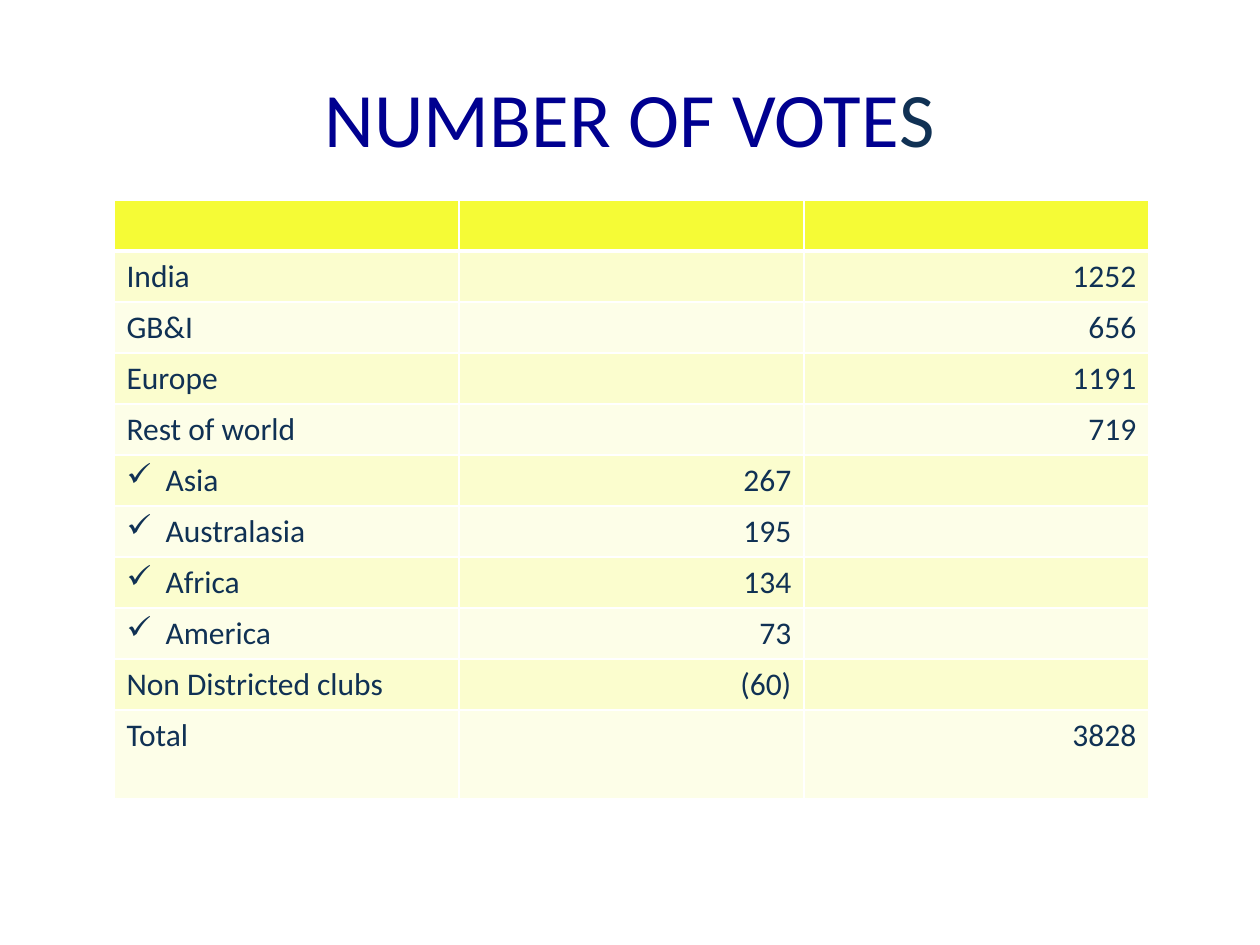
from lxml.etree import SubElement
from pptx import Presentation
from pptx.dml.color import RGBColor
from pptx.enum.text import MSO_ANCHOR as Anchor, PP_ALIGN as Align
from pptx.oxml import parse_xml
from pptx.oxml.ns import nsdecls, qn
from pptx.util import Pt

PX = 914400 // 126
FONT = "Calibri"
COLORS = {
    "title": "000090",
    "text": "103154",
    "header": "F5FB36",
    "odd": "FBFDCE",
    "even": "FDFEE8",
    "border": "FFFFFF",
}
TITLE = [("NUMBER OF VOTE", "title"), ("S", "text")]
ROWS = [
    ("", "", ""),
    ("India", "", "1252"),
    ("GB&I", "", "656"),
    ("Europe", "", "1191"),
    ("Rest of world", "", "719"),
    ("Asia", "267", ""),
    ("Australasia", "195", ""),
    ("Africa", "134", ""),
    ("America", "73", ""),
    ("Non Districted clubs", "(60)", ""),
    ("Total", "", "3828"),
]
CHECKED = {"Asia", "Australasia", "Africa", "America"}
TABLE_LEFT, TABLE_TOP = 114, 200
COLUMN_WIDTH, ROW_HEIGHT, TOTAL_HEIGHT = 345, 51, 89
BULLET_INDENT = 39


def write_text(frame, runs, size=18, align=Align.LEFT, bullet=None):
    paragraph = frame.paragraphs[0]
    paragraph.alignment = align
    if bullet:
        properties = paragraph._p.get_or_add_pPr()
        properties.set("marL", str(BULLET_INDENT * PX))
        properties.set("indent", str(-BULLET_INDENT * PX))
        SubElement(properties, qn("a:buChar"), char=bullet)
    for text, color in runs:
        run = paragraph.add_run()
        run.text = text
        run.font.name = FONT
        run.font.size = Pt(size)
        run.font.color.rgb = RGBColor.from_string(COLORS[color])


def style_cell(cell, fill, bottom):
    cell.fill.solid()
    cell.fill.fore_color.rgb = RGBColor.from_string(COLORS[fill])
    properties = cell._tc.get_or_add_tcPr()
    widths = {"lnL": 1, "lnR": 1, "lnT": 1, "lnB": bottom}
    for index, (side, width) in enumerate(widths.items()):
        properties.insert(index, parse_xml(
            f'<a:{side} {nsdecls("a")} w="{Pt(width)}"><a:solidFill>'
            f'<a:srgbClr val="{COLORS["border"]}"/></a:solidFill></a:{side}>'))


def add_title(slide):
    box = slide.shapes.add_textbox(63 * PX, 38 * PX, 1134 * PX, 157 * PX)
    box.text_frame.word_wrap = True
    box.text_frame.vertical_anchor = Anchor.MIDDLE
    write_text(box.text_frame, TITLE, size=44, align=Align.CENTER)


def add_votes_table(slide):
    columns = len(ROWS[0])
    heights = [ROW_HEIGHT] * (len(ROWS) - 1) + [TOTAL_HEIGHT]
    table = slide.shapes.add_table(
        len(ROWS), columns, TABLE_LEFT * PX, TABLE_TOP * PX,
        columns * COLUMN_WIDTH * PX, sum(heights) * PX).table
    for column in table.columns:
        column.width = COLUMN_WIDTH * PX
    for row_index, values in enumerate(ROWS):
        table.rows[row_index].height = heights[row_index] * PX
        fill = "header" if row_index == 0 else ("even", "odd")[row_index % 2]
        for column_index, value in enumerate(values):
            cell = table.cell(row_index, column_index)
            style_cell(cell, fill, bottom=3 if row_index == 0 else 1)
            if value:
                write_text(cell.text_frame, [(value, "text")],
                           align=Align.RIGHT if column_index else Align.LEFT,
                           bullet="✓" if value in CHECKED else None)


def main():
    presentation = Presentation()
    presentation.slide_width = 1260 * PX
    presentation.slide_height = 945 * PX
    slide = presentation.slides.add_slide(presentation.slide_layouts[6])
    add_title(slide)
    add_votes_table(slide)
    presentation.save("out.pptx")


if __name__ == "__main__":
    main()
